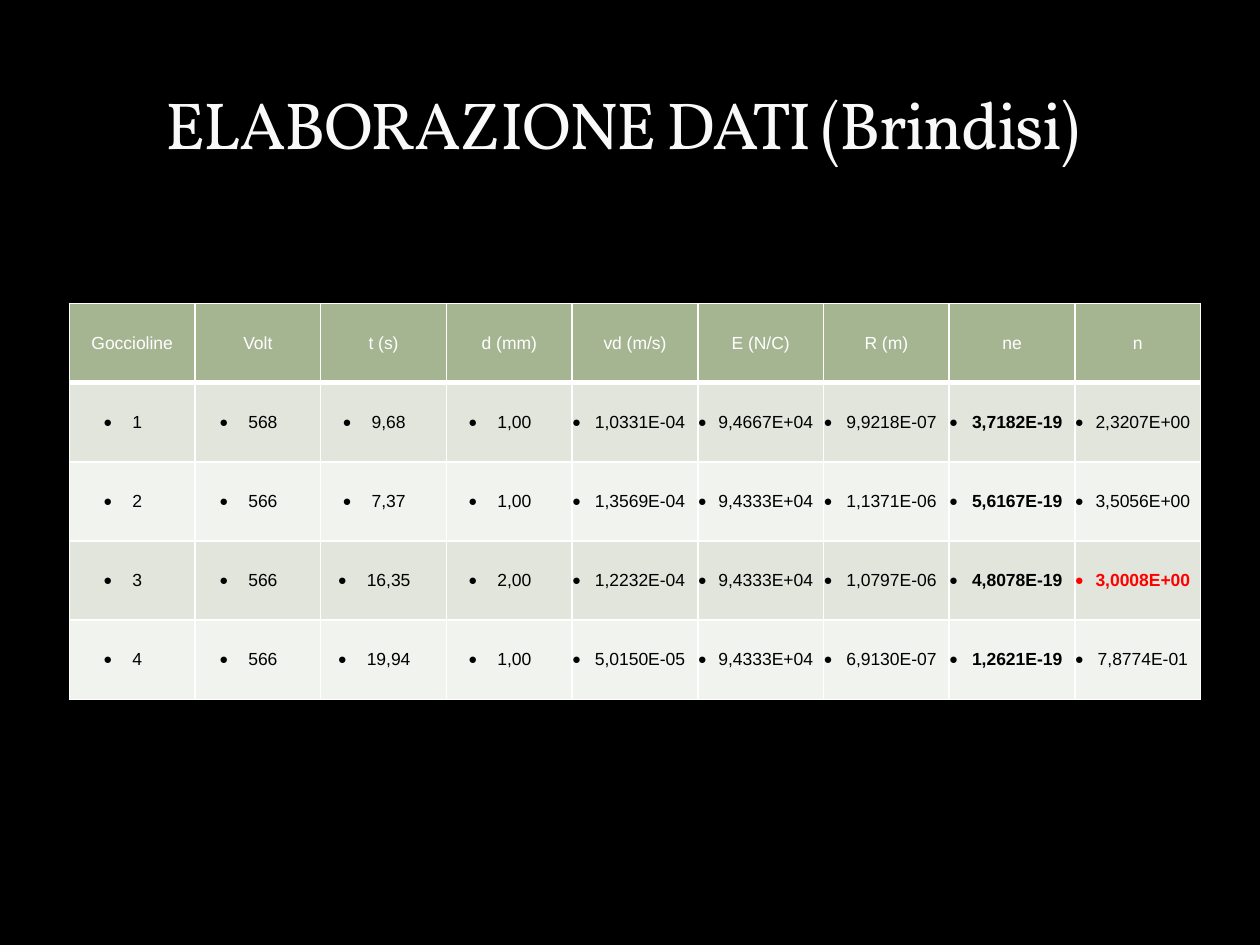
import pptx
import pptx.util
import pptx.dml.color
import pptx.enum.text
import pptx.oxml
import pptx.oxml.ns
from pptx.util import Inches

TITLE = "ELABORAZIONE DATI (Brindisi)"
HEADERS = ["Goccioline", "Volt", "t (s)", "d (mm)", "vd (m/s)",
           "E (N/C)", "R (m)", "ne", "n"]
DROPLETS = [
    ["1", "568", "9,68", "1,00", "1,0331E-04", "9,4667E+04", "9,9218E-07", "3,7182E-19", "2,3207E+00"],
    ["2", "566", "7,37", "1,00", "1,3569E-04", "9,4333E+04", "1,1371E-06", "5,6167E-19", "3,5056E+00"],
    ["3", "566", "16,35", "2,00", "1,2232E-04", "9,4333E+04", "1,0797E-06", "4,8078E-19", "3,0008E+00"],
    ["4", "566", "19,94", "1,00", "5,0150E-05", "9,4333E+04", "6,9130E-07", "1,2621E-19", "7,8774E-01"],
]
HIGHLIGHT = "3,0008E+00"
BOLD_COLUMN = HEADERS.index("ne")
COLORS = {
    "background": "000000", "title": "F9F9F9", "header": "A5B592",
    "odd": "E1E5DC", "even": "F0F3EE", "border": "FFFFFF",
    "header_text": "FFFFFF", "text": "000000", "highlight": "FF0000",
}
TABLE = {"left": 0.55, "top": 2.41, "width": 8.98, "height": 3.14}
NAMESPACE = pptx.oxml.ns.nsdecls("a")


def color(name):
    return pptx.dml.color.RGBColor.from_string(COLORS[name])


def write_text(frame, text, *, size, font, fill, bold=False, bullet=False, spacing=None):
    paragraph = frame.paragraphs[0]
    paragraph.alignment = pptx.enum.text.PP_ALIGN.CENTER
    if bullet:
        properties = paragraph._p.get_or_add_pPr()
        properties.set("marL", str(Inches(0.08)))
        properties.set("indent", str(Inches(-0.23)))
        for tag in ('buClrTx', 'buSzPct val="85000"',
                    'buFont typeface="Arial"', 'buChar char="●"'):
            properties.append(pptx.oxml.parse_xml(f"<a:{tag} {NAMESPACE}/>"))
    run = paragraph.add_run()
    run.text = text
    run.font.size = pptx.util.Pt(size)
    run.font.name = font
    run.font.bold = bold
    run.font.color.rgb = color(fill)
    if spacing is not None:
        run._r.get_or_add_rPr().set("spc", str(spacing * 100))


def set_borders(cell, widths):
    properties = cell._tc.get_or_add_tcPr()
    for index, (side, width) in enumerate(widths.items()):
        properties.insert(index, pptx.oxml.parse_xml(
            f'<a:ln{side} {NAMESPACE} w="{pptx.util.Pt(width)}"><a:solidFill>'
            f'<a:srgbClr val="{COLORS["border"]}"/></a:solidFill></a:ln{side}>'))


def add_title(slide):
    shape = slide.shapes.add_textbox(Inches(0.5), Inches(0.39), Inches(8.88), Inches(0.95))
    frame = shape.text_frame
    frame.word_wrap = True
    frame.vertical_anchor = pptx.enum.text.MSO_ANCHOR.BOTTOM
    write_text(frame, TITLE, size=38, font="Vollkorn", fill="title", spacing=-1)


def add_results_table(slide):
    rows = [HEADERS] + DROPLETS
    table = slide.shapes.add_table(
        len(rows), len(HEADERS),
        *(Inches(TABLE[key]) for key in ("left", "top", "width", "height"))).table
    for column in table.columns:
        column.width = Inches(TABLE["width"] / len(HEADERS))
    for row_index, values in enumerate(rows):
        table.rows[row_index].height = Inches(TABLE["height"] / len(rows))
        is_header = row_index == 0
        background = "header" if is_header else "odd" if row_index % 2 else "even"
        borders = {"L": 1, "R": 1, "T": 3 if row_index == 1 else 1, "B": 3 if is_header else 1}
        for column_index, value in enumerate(values):
            cell = table.cell(row_index, column_index)
            cell.margin_left = cell.margin_right = cell.margin_top = cell.margin_bottom = 0
            cell.vertical_anchor = pptx.enum.text.MSO_ANCHOR.MIDDLE
            cell.fill.solid()
            cell.fill.fore_color.rgb = color(background)
            set_borders(cell, borders)
            highlighted = value == HIGHLIGHT
            text_color = "header_text" if is_header else "highlight" if highlighted else "text"
            write_text(cell.text_frame, value, size=10, font="Arial", fill=text_color,
                       bold=highlighted or (column_index == BOLD_COLUMN and not is_header),
                       bullet=not is_header)


def main():
    presentation = pptx.Presentation()
    presentation.slide_width = Inches(10)
    presentation.slide_height = Inches(7.5)
    slide = presentation.slides.add_slide(presentation.slide_layouts[6])
    slide.background.fill.solid()
    slide.background.fill.fore_color.rgb = color("background")
    add_title(slide)
    add_results_table(slide)
    presentation.save("out.pptx")


if __name__ == "__main__":
    main()
